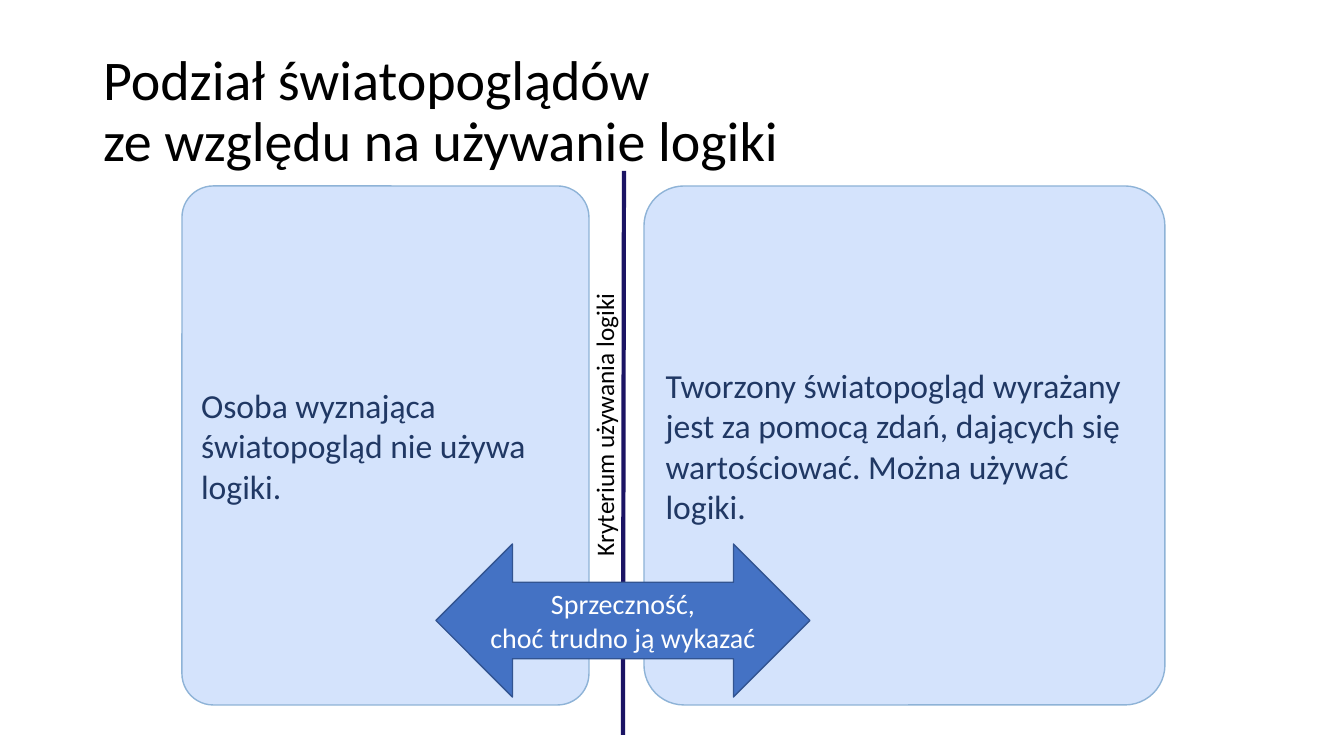
"""Builds a slide that divides worldviews by their use of logic."""
import pptx
import pptx.dml.color
import pptx.enum.shapes
import pptx.enum.text
import pptx.oxml
import pptx.util

EMU_PER_PX = 914400 / 100.8
FONT = "Calibri"
COLORS = {
    "black": "000000",
    "white": "FFFFFF",
    "panel": "D4E3FC",
    "panel_edge": "8EB3D7",
    "panel_text": "203864",
    "divider": "1B1464",
    "arrow": "4472C4",
    "arrow_edge": "325491",
}
SHAPES = pptx.enum.shapes.MSO_SHAPE
ALIGN = pptx.enum.text.PP_ALIGN
ANCHOR = pptx.enum.text.MSO_ANCHOR
PANEL_TOP, PANEL_HEIGHT = 186, 519


def px(length):
    return pptx.util.Emu(round(length * EMU_PER_PX))


def color(name):
    return pptx.dml.color.RGBColor.from_string(COLORS[name])


def add_span(para, text, size, ink):
    span = para.add_run()
    span.text = text
    span.font.name = FONT
    span.font.size = pptx.util.Pt(size)
    span.font.color.rgb = color(ink)


def write_lines(frame, lines, size, ink, align=ALIGN.LEFT, anchor=ANCHOR.MIDDLE):
    frame.word_wrap = True
    frame.vertical_anchor = anchor
    for index, line in enumerate(lines):
        para = frame.add_paragraph() if index else frame.paragraphs[0]
        para.alignment = align
        add_span(para, line, size, ink)


def set_title(page, lines):
    title = page.shapes.title
    title.left, title.top, title.width, title.height = map(px, (93, 40, 1159, 146))
    frame = title.text_frame
    frame.word_wrap = True
    frame.vertical_anchor = ANCHOR.MIDDLE
    para = frame.paragraphs[0]
    para.alignment = ALIGN.LEFT
    para.line_spacing = 0.9
    for index, line in enumerate(lines):
        if index:
            para.add_line_break()
        add_span(para, line, 40, "black")


def add_block(page, kind, bounds, fill, edge):
    block = page.shapes.add_shape(kind, *map(px, bounds))
    block.shadow.inherit = False
    block.fill.solid()
    block.fill.fore_color.rgb = color(fill)
    block.line.color.rgb = color(edge)
    block.line.width = pptx.util.Pt(1)
    return block


def add_panel(page, left, width, text):
    bounds = (left, PANEL_TOP, width, PANEL_HEIGHT)
    panel = add_block(page, SHAPES.ROUNDED_RECTANGLE, bounds, "panel", "panel_edge")
    panel.adjustments[0] = 0.077
    write_lines(panel.text_frame, [text], 24, "panel_text")


def add_divider(page, start, end):
    divider = page.shapes.add_connector(
        pptx.enum.shapes.MSO_CONNECTOR.STRAIGHT, *map(px, start + end))
    divider.line.color.rgb = color("divider")
    divider.line.width = pptx.util.Pt(3)
    properties = divider.element.spPr
    properties.append(pptx.oxml.parse_xml(
        '<a:effectLst xmlns:a="http://schemas.openxmlformats.org/drawingml/2006/main"/>'))


def add_vertical_label(page, bounds, text):
    box = page.shapes.add_textbox(*map(px, bounds))
    box.rotation = 270
    write_lines(box.text_frame, [text], 18, "black", anchor=ANCHOR.TOP)


def add_double_arrow(page, bounds, lines):
    arrow = add_block(page, SHAPES.LEFT_RIGHT_ARROW, bounds, "arrow", "arrow_edge")
    write_lines(arrow.text_frame, lines, 20, "white", ALIGN.CENTER)


def main():
    deck = pptx.Presentation()
    deck.slide_width, deck.slide_height = px(1344), px(756)
    page = deck.slides.add_slide(deck.slide_layouts.get_by_name("Title Only"))
    set_title(page, ["Podział światopoglądów ", "ze względu na używanie logiki"])
    add_panel(page, 182, 407, "Osoba wyznająca światopogląd nie używa logiki.")
    add_panel(page, 644, 521,
              "Tworzony światopogląd wyrażany jest za pomocą zdań, "
              "dających się wartościować. Można używać logiki.")
    add_divider(page, (623, 735), (624, 171))
    add_vertical_label(page, (407, 349, 394, 40), "Kryterium używania logiki")
    add_double_arrow(page, (436, 544, 374, 153),
                     ["Sprzeczność,", "choć trudno ją wykazać"])
    deck.save("out.pptx")


if __name__ == "__main__":
    main()
